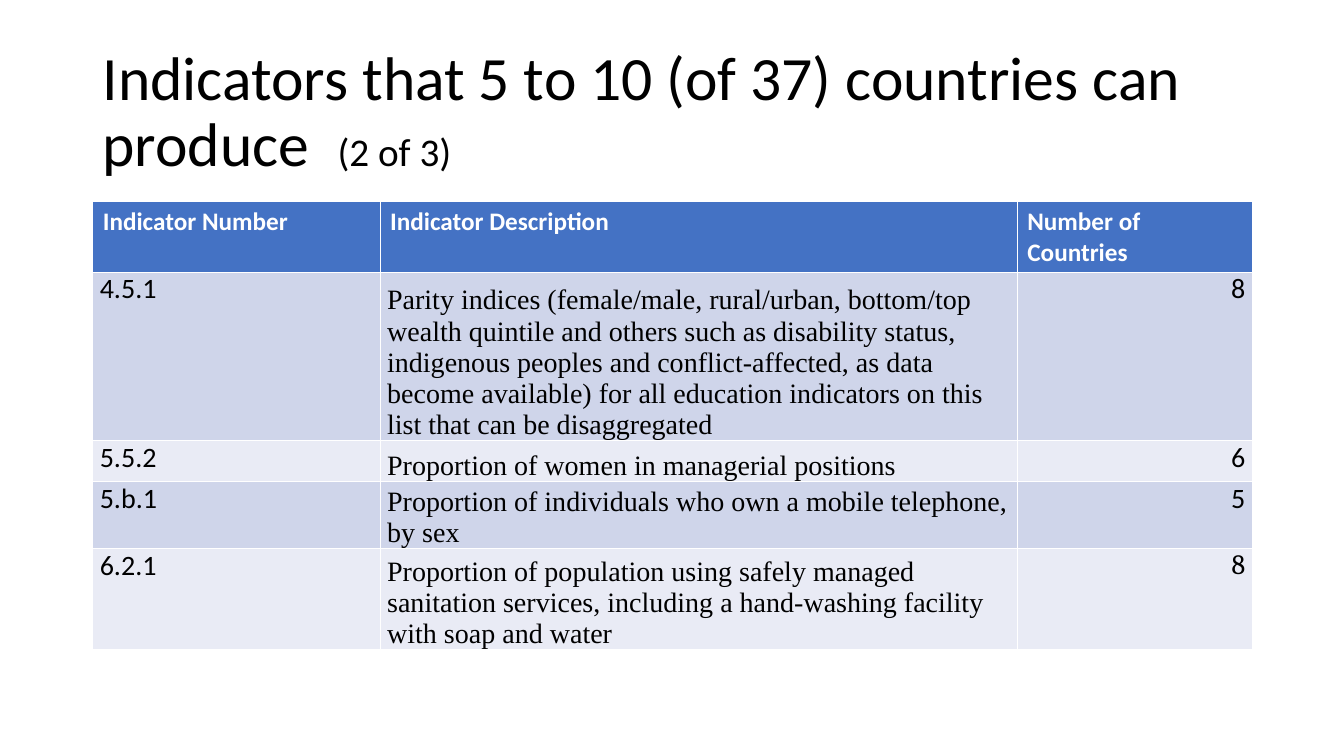
from pptx import Presentation
from pptx.dml.color import RGBColor
from pptx.enum.text import MSO_ANCHOR as ANCHOR, PP_ALIGN as ALIGN
from pptx.util import Inches, Pt

# Content
TITLE = "Indicators that 5 to 10 (of 37) countries can produce  "
PART = "(2 of 3)"
HEADERS = ("Indicator Number", "Indicator Description", "Number of Countries")
INDICATORS = [
    ("4.5.1", "Parity indices (female/male, rural/urban, bottom/top wealth quintile "
     "and others such as disability status, indigenous peoples and "
     "conflict-affected, as data become available) for all education indicators "
     "on this list that can be disaggregated", "8"),
    ("5.5.2", "Proportion of women in managerial positions", "6"),
    ("5.b.1", "Proportion of individuals who own a mobile telephone, by sex", "5"),
    ("6.2.1", "Proportion of population using safely managed sanitation services, "
     "including a hand-washing facility with soap and water", "8"),
]

# Look
BLACK = RGBColor(0x00, 0x00, 0x00)
WHITE = RGBColor(0xFF, 0xFF, 0xFF)
BLUE = RGBColor(0x44, 0x72, 0xC4)
BANDS = (RGBColor(0xCF, 0xD5, 0xEA), RGBColor(0xE9, 0xEB, 0xF5))
BODY_FONTS = ("Calibri", "Times New Roman", "Calibri")
COL_WIDTHS = (2.85, 6.32, 2.33)
LEFT, WIDTH, ROW_HEIGHT = 0.92, sum(COL_WIDTHS), 0.41


def style_run(r, size, color, font="Calibri", bold=False):
    r.font.size, r.font.name, r.font.bold = Pt(size), font, bold
    r.font.color.rgb = color


def fill_cell(cell, text, fill, size, color, font="Calibri", bold=False):
    cell.fill.solid()
    cell.fill.fore_color.rgb = fill
    p = cell.text_frame.paragraphs[0]
    p.text = text
    style_run(p.runs[0], size, color, font, bold)
    return p


prs = Presentation()
prs.slide_width, prs.slide_height = Inches(13.33), Inches(7.5)
s = prs.slides.add_slide(prs.slide_layouts[6])

# Title
tf = s.shapes.add_textbox(Inches(LEFT), Inches(0.4), Inches(WIDTH), Inches(1.45)).text_frame
tf.word_wrap = True
tf.vertical_anchor = ANCHOR.MIDDLE
p = tf.paragraphs[0]
p.line_spacing = 0.9
for text, size in ((TITLE, 44), (PART, 28)):
    r = p.add_run()
    r.text = text
    style_run(r, size, BLACK)

# Table: rows grow to fit their text
n_rows = len(INDICATORS) + 1
table = s.shapes.add_table(n_rows, len(HEADERS), Inches(LEFT), Inches(2),
                           Inches(WIDTH), Inches(ROW_HEIGHT * n_rows)).table
for col, width in zip(table.columns, COL_WIDTHS):
    col.width = Inches(width)
for row in table.rows:
    row.height = Inches(ROW_HEIGHT)

# Header row
for j, header in enumerate(HEADERS):
    fill_cell(table.cell(0, j), header, BLUE, 18, WHITE, bold=True)

# Indicator rows
for i, indicator in enumerate(INDICATORS):
    for j, text in enumerate(indicator):
        cell = table.cell(i + 1, j)
        cell.margin_left = cell.margin_right = Inches(0.07)
        cell.margin_top = cell.margin_bottom = 0
        p = fill_cell(cell, text, BANDS[i % 2], 20, BLACK, BODY_FONTS[j])
        if j == 1:
            cell.vertical_anchor = ANCHOR.BOTTOM
        elif j == 2:
            p.alignment = ALIGN.RIGHT

# The first count has space above, the last count its own font
table.cell(1, 2).text_frame.paragraphs[0].space_before = Pt(12)
table.cell(n_rows - 1, 2).text_frame.paragraphs[0].runs[0].font.name = "Cambria"

prs.save("out.pptx")
